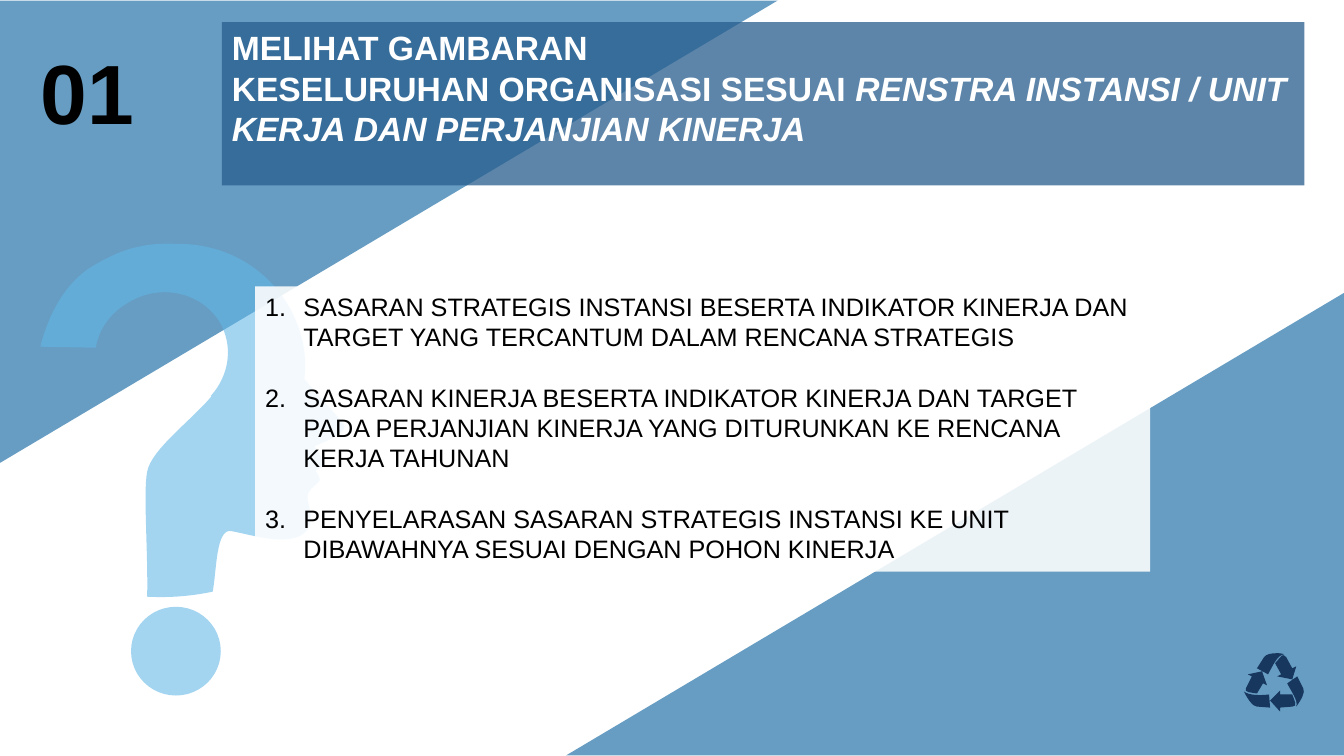
from lxml import etree
from pptx import Presentation
from pptx.dml.color import RGBColor
from pptx.enum import shapes, text
from pptx.oxml import ns
from pptx.util import Inches, Pt

COLORS = {
    "band": "4185B5",
    "header": "285D8D",
    "question": "62B7E8",
    "recycle": "17375E",
    "white": "FFFFFF",
    "black": "000000",
}
FONT = "Arial"
UNITS_PER_INCH = 1000

QUESTION_HEAD = """
M .92 2.64 C 1.14 2.51 1.37 2.4 1.75 2.42 C 2.58 2.41 3.1 3.12 3.02 3.76
C 3.15 3.92 3.42 4.2 3.42 4.23 C 3.4 4.33 3.23 4.37 3.12 4.43
C 3.16 4.49 3.22 4.59 3.21 4.61 C 3.2 4.63 3.17 4.65 3.13 4.67
C 3.15 4.7 3.18 4.74 3.17 4.77 C 3.14 4.81 3.08 4.84 3.06 4.89
C 3.01 4.96 3.19 5.21 2.97 5.32 C 2.78 5.4 2.51 5.31 2.3 5.27
C 2.14 5.23 2.15 5.67 2.11 5.87 C 1.87 5.92 1.66 5.93 1.46 5.92
C 1.47 5.47 1.42 4.89 1.46 4.68 C 1.5 4.46 1.9 4.17 2.1 3.93
L 2.09 3.93 C 2.28 3.72 2.32 3.42 2.17 3.18
C 1.98 2.89 1.57 2.81 1.26 3.01 C 1.09 3.11 .98 3.27 .95 3.45
L .4 3.44 C .48 3.12 .65 2.8 .92 2.64
"""
RECYCLE_ARROWS = """
M 12.34 6.86 C 12.39 6.9 12.5 6.9 12.59 6.89 L 12.6 7.02 L 12.47 7.01
C 12.43 7.01 12.38 6.94 12.34 6.86
M 12.7 6.85 L 12.7 6.89 L 12.82 6.89 C 12.84 6.95 12.88 7.01 12.82 7.01
L 12.7 7.02 L 12.7 7.06 L 12.6 6.95
M 12.87 6.71 L 12.93 6.83 C 12.95 6.87 12.91 6.94 12.86 7.01
C 12.88 6.95 12.81 6.86 12.77 6.78
M 12.52 6.66 L 12.57 6.8 L 12.53 6.78 L 12.47 6.88
C 12.41 6.87 12.34 6.87 12.36 6.83 L 12.42 6.71 L 12.38 6.69
M 12.73 6.5 C 12.74 6.5 12.75 6.51 12.76 6.52 L 12.82 6.63 L 12.86 6.61
L 12.82 6.74 L 12.67 6.71 L 12.71 6.69 L 12.65 6.58
C 12.68 6.55 12.71 6.5 12.73 6.5
M 12.67 6.48 C 12.69 6.48 12.71 6.48 12.74 6.49 C 12.67 6.5 12.63 6.6 12.58 6.69
L 12.47 6.63 L 12.54 6.52 C 12.56 6.49 12.61 6.48 12.67 6.48
"""
GOALS = [
    "SASARAN STRATEGIS INSTANSI BESERTA INDIKATOR KINERJA DAN TARGET YANG TERCANTUM DALAM RENCANA STRATEGIS",
    "SASARAN KINERJA BESERTA INDIKATOR KINERJA DAN TARGET PADA PERJANJIAN KINERJA YANG DITURUNKAN KE RENCANA KERJA TAHUNAN",
    "PENYELARASAN SASARAN STRATEGIS INSTANSI KE UNIT DIBAWAHNYA SESUAI DENGAN POHON KINERJA",
]


def set_fill(shape, color, opacity=100):
    shape.fill.solid()
    shape.fill.fore_color.rgb = RGBColor.from_string(COLORS[color])
    if opacity < 100:
        color_element = shape._element.spPr.find(".//" + ns.qn("a:srgbClr"))
        etree.SubElement(color_element, ns.qn("a:alpha"), val=str(opacity * 1000))


def place(shape, left, top, width, height):
    shape.left, shape.top = Inches(left), Inches(top)
    shape.width, shape.height = Inches(width), Inches(height)


def finish_shape(shape, color, opacity):
    set_fill(shape, color, opacity)
    shape.line.fill.background()
    shape.shadow.inherit = False


def add_preset(slide, kind, box, color, opacity, rotation=0):
    shape = slide.shapes.add_shape(kind, *(Inches(value) for value in box))
    shape.rotation = rotation
    finish_shape(shape, color, opacity)


def read_contour(outline):
    segments = []
    for token in outline.split():
        if token in "MCL":
            segments.append([])
        else:
            segments[-1].append(round(float(token) * UNITS_PER_INCH))
    return [list(zip(values[::2], values[1::2])) for values in segments]


def bend_lines(shape, segments, origin):
    lines = list(shape._element.iter(ns.qn("a:lnTo")))
    for line, points in zip(lines, segments):
        if len(points) == 3:
            curve = etree.Element(ns.qn("a:cubicBezTo"))
            for x, y in points:
                etree.SubElement(curve, ns.qn("a:pt"),
                                 x=str(x - origin[0]), y=str(y - origin[1]))
            line.getparent().replace(line, curve)


def add_outline(slide, outline, color, opacity=100):
    contours = [read_contour("M" + part) for part in outline.split("M")[1:]]
    builder = None
    for contour in contours:
        start, *ends = [points[-1] for points in contour]
        if builder is None:
            builder = slide.shapes.build_freeform(
                *start, scale=Inches(1) / UNITS_PER_INCH)
        else:
            builder.move_to(*start)
        builder.add_line_segments(ends, close=True)
    shape = builder.convert_to_shape()
    anchors = [points[-1] for contour in contours for points in contour]
    origin = [min(values) for values in zip(*anchors)]
    bend_lines(shape, [points for contour in contours for points in contour[1:]], origin)
    finish_shape(shape, color, opacity)


def bring_to_front(slide, shape):
    slide.shapes._spTree.append(shape._element)


def format_paragraph(paragraph, size, color, bold=False, gap=0):
    paragraph.space_before = Pt(gap)
    paragraph.line_spacing = Pt(size * 1.2)
    for run in paragraph.runs:
        run.font.name = FONT
        run.font.size = Pt(size)
        run.font.bold = bold
        run.font.color.rgb = RGBColor.from_string(COLORS[color])


def prepare_frame(shape, anchor):
    frame = shape.text_frame
    frame.word_wrap = True
    frame.auto_size = text.MSO_AUTO_SIZE.NONE
    frame.vertical_anchor = anchor
    return frame


def add_number(slide):
    box = slide.shapes.add_textbox(0, 0, 0, 0)
    place(box, 0.13, 0.35, 1.47, 1.11)
    frame = prepare_frame(box, text.MSO_ANCHOR.MIDDLE)
    frame.text = "01"
    paragraph = frame.paragraphs[0]
    paragraph.alignment = text.PP_ALIGN.CENTER
    format_paragraph(paragraph, 60, "black", bold=True)
    paragraph.line_spacing = 1.0


def fill_title(slide):
    title = slide.shapes.title
    bring_to_front(slide, title)
    place(title, 2.2, 0.22, 10.74, 1.62)
    set_fill(title, "header", 75)
    frame = prepare_frame(title, text.MSO_ANCHOR.TOP)
    frame.text = "MELIHAT GAMBARAN\nKESELURUHAN ORGANISASI SESUAI "
    plan = frame.paragraphs[1].add_run()
    plan.text = "RENSTRA INSTANSI / UNIT KERJA DAN PERJANJIAN KINERJA"
    plan.font.italic = True
    for paragraph in frame.paragraphs:
        paragraph.alignment = text.PP_ALIGN.LEFT
        format_paragraph(paragraph, 24, "white", bold=True)


def fill_goals(slide):
    body = slide.placeholders[1]
    bring_to_front(slide, body)
    place(body, 2.53, 2.84, 8.88, 2.83)
    set_fill(body, "white", 88)
    frame = prepare_frame(body, text.MSO_ANCHOR.TOP)
    frame.text = "\n".join(GOALS)
    for number, paragraph in enumerate(frame.paragraphs):
        properties = paragraph._p.get_or_add_pPr()
        properties.set("marL", str(Inches(0.38)))
        properties.set("indent", str(-Inches(0.38)))
        etree.SubElement(properties, ns.qn("a:buFont"), typeface=FONT)
        etree.SubElement(properties, ns.qn("a:buAutoNum"), type="arabicPeriod")
        format_paragraph(paragraph, 18, "black", gap=21.6 if number else 0)


def main():
    presentation = Presentation()
    presentation.slide_width, presentation.slide_height = Inches(40 / 3), Inches(7.5)
    slide = presentation.slides.add_slide(presentation.slide_layouts[1])
    triangle = shapes.MSO_SHAPE.RIGHT_TRIANGLE
    add_preset(slide, triangle, (1.56, -1.56, 4.59, 7.72), "band", 80, 90)
    add_preset(slide, triangle, (7.18, 1.34, 4.59, 7.72), "band", 80, 270)
    add_number(slide)
    fill_title(slide)
    add_outline(slide, QUESTION_HEAD, "question", 58)
    add_preset(slide, shapes.MSO_SHAPE.OVAL, (1.3, 6.02, 0.89, 0.88), "question", 58)
    add_outline(slide, RECYCLE_ARROWS, "recycle")
    fill_goals(slide)
    presentation.save("out.pptx")


if __name__ == "__main__":
    main()
